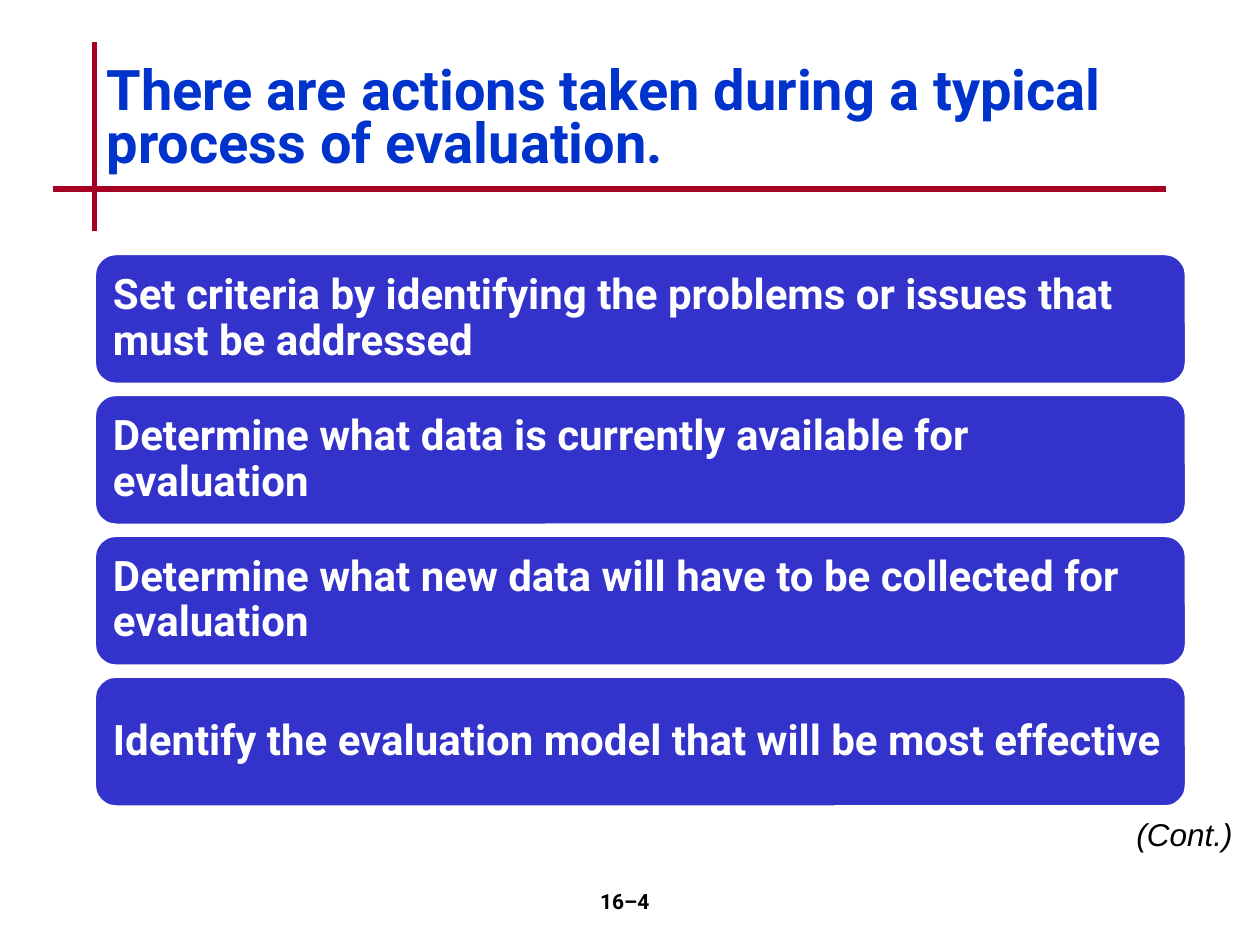
from lxml import etree
from pptx import Presentation, util as u
from pptx.dml.color import RGBColor
from pptx.enum import shapes, text
from pptx.oxml.ns import qn


def paint(color, value):
    color.rgb = RGBColor.from_string(value)


def apply(target, values):
    for name, value in values.items():
        setattr(target, name, value)


class SlideBuilder:
    WHITE = "FFFFFF"
    BLACK = "000000"
    RULE = "A50021"
    PANEL = "3333CC"
    TITLE = "0033CC"
    FONT = "Roboto"

    def __init__(self, slide):
        self.slide = slide

    def rule(self, start, end):
        line = self.slide.shapes.add_connector(
            shapes.MSO_CONNECTOR.STRAIGHT, *map(u.Cm, start + end))
        paint(line.line.color, self.RULE)
        line.line.width = u.Pt(3)
        etree.SubElement(line._element.spPr, qn("a:effectLst"))

    def fill_text(self, box, words, size, color, frame=None, para=None, font=None):
        apply(box.text_frame, {"word_wrap": True, **(frame or {})})
        paragraph = box.text_frame.paragraphs[0]
        apply(paragraph, {"alignment": text.PP_ALIGN.LEFT, **(para or {})})
        span = paragraph.add_run()
        span.text = words
        apply(span.font, {"name": self.FONT, "size": u.Pt(size), "bold": True,
                          **(font or {})})
        paint(span.font.color, color)

    def label(self, bounds, words, size, color, **formats):
        box = self.slide.shapes.add_textbox(*map(u.Cm, bounds))
        self.fill_text(box, words, size, color, **formats)

    def panel(self, bounds, words):
        box = self.slide.shapes.add_shape(
            shapes.MSO_SHAPE.ROUNDED_RECTANGLE, *map(u.Cm, bounds))
        box.shadow.inherit = False
        box.fill.solid()
        paint(box.fill.fore_color, self.PANEL)
        paint(box.line.color, self.WHITE)
        box.line.width = u.Pt(2)
        margins = dict.fromkeys(
            ("margin_left", "margin_top", "margin_right", "margin_bottom"), u.Cm(0.25))
        self.fill_text(box, words, 24, self.WHITE,
                       frame={"vertical_anchor": text.MSO_ANCHOR.MIDDLE, **margins},
                       para={"line_spacing": 0.9})


def main():
    deck = Presentation()
    apply(deck, {"slide_width": u.Cm(25.4), "slide_height": u.Cm(19.05)})
    page = SlideBuilder(deck.slides.add_slide(deck.slide_layouts[6]))

    page.rule((1.9, 0.85), (1.9, 4.66))
    page.rule((1.06, 3.81), (23.5, 3.81))

    actions = [
        "Set criteria by identifying the problems or issues that must be addressed",
        "Determine what data is currently available for evaluation",
        "Determine what new data will have to be collected for evaluation",
        "Identify the evaluation model that will be most effective",
    ]
    top, pitch = 5.11, 2.84
    for index, action in enumerate(actions):
        page.panel((1.9, top + index * pitch, 22.02, 2.64), action)

    page.label((1.9, 0.85, 21.59, 3.18),
               "There are actions taken during a typical process of evaluation.",
               32, page.TITLE,
               frame={"vertical_anchor": text.MSO_ANCHOR.MIDDLE},
               para={"line_spacing": 0.8})
    page.label((9.95, 17.78, 5.29, 1.27), "16–4", 12, page.BLACK,
               para={"alignment": text.PP_ALIGN.CENTER})
    page.label((22.66, 16.31, 2.46, 1.02), "(Cont.)", 18, page.BLACK,
               frame={"word_wrap": False,
                      "auto_size": text.MSO_AUTO_SIZE.SHAPE_TO_FIT_TEXT},
               font={"name": "Arial", "bold": False, "italic": True})

    deck.save("out.pptx")


if __name__ == "__main__":
    main()
